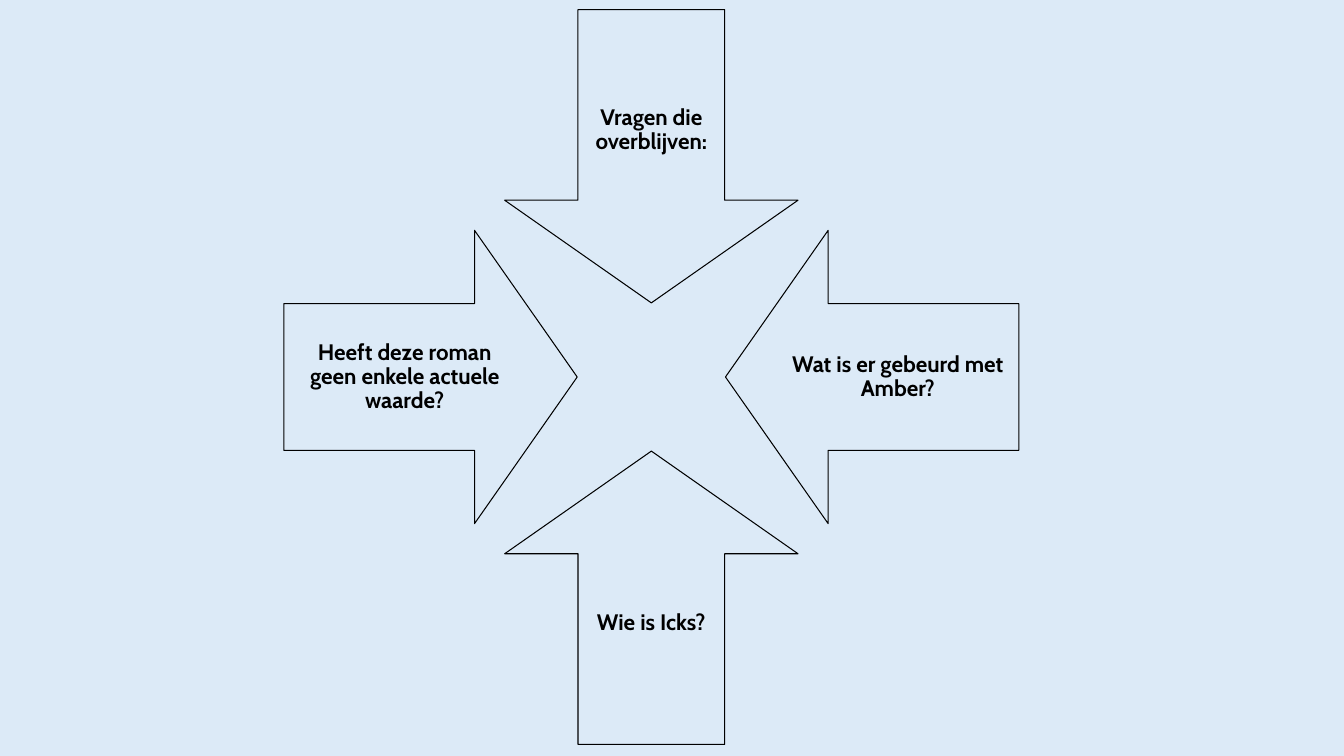
from pptx import Presentation
from pptx.dml.color import RGBColor
from pptx.enum.shapes import MSO_SHAPE
from pptx.enum.text import MSO_ANCHOR, PP_ALIGN
from pptx.util import Inches, Pt

BACKGROUND = RGBColor(0xDC, 0xEA, 0xF7)
BLACK = RGBColor(0, 0, 0)

# text, horizontal direction, vertical direction, rotation
ARROWS = [
    ("Vragen die overblijven:", 0, -1, 0),
    ("Wat is er gebeurd met Amber?", 1, 0, 90),
    ("Wie is Icks?", 0, 1, 180),
    ("Heeft deze roman geen enkele actuele waarde?", -1, 0, 270),
]

CENTER_X, CENTER_Y = 6.46, 3.74
ARROW_SIZE = 2.91
ARROW_DISTANCE = 2.19
TEXT_LENGTH, TEXT_BREADTH = 2.4, 1.45
TEXT_DISTANCE = ARROW_DISTANCE + (ARROW_SIZE - TEXT_LENGTH) / 2
MARGIN = Inches(0.12)


def centered_box(dx, dy, distance, width, height):
    left = CENTER_X + dx * distance - width / 2
    top = CENTER_Y + dy * distance - height / 2
    return [Inches(v) for v in (left, top, width, height)]


def add_arrow(shapes, dx, dy, rotation):
    box = centered_box(dx, dy, ARROW_DISTANCE, ARROW_SIZE, ARROW_SIZE)
    sp = shapes.add_shape(MSO_SHAPE.DOWN_ARROW, *box)
    sp.adjustments[0] = 0.5
    sp.adjustments[1] = 0.35
    sp.rotation = rotation
    sp.shadow.inherit = False
    sp.fill.background()
    sp.line.color.rgb = BLACK
    sp.line.width = Pt(0.75)


def add_label(shapes, text, dx, dy):
    size = (TEXT_LENGTH, TEXT_BREADTH) if dx else (TEXT_BREADTH, TEXT_LENGTH)
    sp = shapes.add_textbox(*centered_box(dx, dy, TEXT_DISTANCE, *size))
    tf = sp.text_frame
    tf.word_wrap = True
    tf.vertical_anchor = MSO_ANCHOR.MIDDLE
    tf.margin_left = tf.margin_right = tf.margin_top = tf.margin_bottom = MARGIN
    p = tf.paragraphs[0]
    p.text = text
    p.alignment = PP_ALIGN.CENTER
    p.line_spacing = 0.9
    p.space_after = Pt(5.6)
    p.font.name = "Cabin"
    p.font.size = Pt(16)
    p.font.bold = True
    p.font.color.rgb = BLACK


def main():
    prs = Presentation()
    prs.slide_width = Inches(13.33)
    prs.slide_height = Inches(7.5)
    s = prs.slides.add_slide(prs.slide_layouts[6])
    s.background.fill.solid()
    s.background.fill.fore_color.rgb = BACKGROUND
    diagram = s.shapes.add_group_shape()
    for text, dx, dy, rotation in ARROWS:
        add_arrow(diagram.shapes, dx, dy, rotation)
        add_label(diagram.shapes, text, dx, dy)
    prs.save("out.pptx")


if __name__ == "__main__":
    main()
